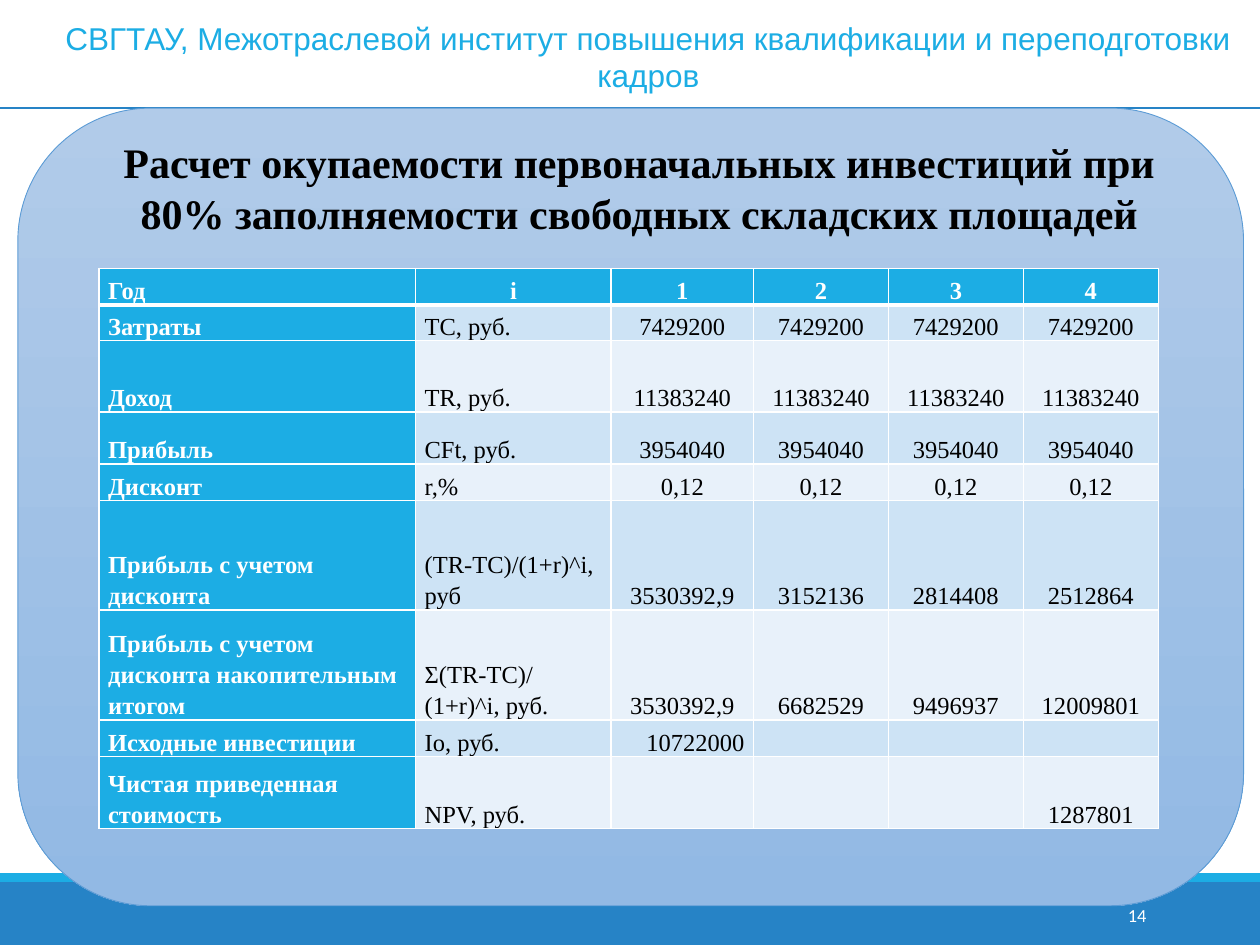
import pptx
import pptx.util
import pptx.dml.color
import pptx.enum.shapes
import pptx.enum.text
import lxml.etree
from pptx.oxml.ns import qn
from pptx.util import Cm

COLORS = {
    "blue": "2683C6",
    "cyan": "1CADE4",
    "panel_top": "B1CBE9",
    "panel_bottom": "92B9E4",
    "panel_line": "5B9BD5",
    "band_dark": "CDE3F5",
    "band_light": "E8F1FA",
    "white": "FFFFFF",
    "black": "000000",
}
SERIF = "Times New Roman"
ALIGN = pptx.enum.text.PP_ALIGN
ANCHOR = pptx.enum.text.MSO_ANCHOR
SHAPE = pptx.enum.shapes.MSO_SHAPE

COLUMN_WIDTHS = [6.38, 3.94, 2.87, 2.72, 2.72, 2.72]
ROWS = [
    (0.74, ["Год", "i", "1", "2", "3", "4"]),
    (0.71, ["Затраты", "TC, руб."] + ["7429200"] * 4),
    (1.45, ["Доход", "TR, руб."] + ["11383240"] * 4),
    (1.04, ["Прибыль", "CFt, руб."] + ["3954040"] * 4),
    (0.74, ["Дисконт", "r,%"] + ["0,12"] * 4),
    (2.21, ["Прибыль с учетом дисконта", "(TR-TC)/(1+r)^i, руб",
            "3530392,9", "3152136", "2814408", "2512864"]),
    (2.21, ["Прибыль с учетом дисконта накопительным итогом", "Σ(TR-TC)/(1+r)^i, руб.",
            "3530392,9", "6682529", "9496937", "12009801"]),
    (0.74, ["Исходные инвестиции", "Io, руб.", "10722000", "", "", ""]),
    (1.45, ["Чистая приведенная стоимость", "NPV, руб.", "", "", "", "1287801"]),
]
INVESTMENT_CELL = (7, 2)


def rgb(name):
    return pptx.dml.color.RGBColor.from_string(COLORS[name])


def add_text(paragraph, text, size, font, color, bold=False):
    run = paragraph.add_run()
    run.text = text
    run.font.size = pptx.util.Pt(size)
    run.font.name = font
    run.font.bold = bold
    run.font.color.rgb = rgb(color)


def add_text_box(slide, box, text, size, font, color, align, anchor, bold=False, grow=False):
    frame = slide.shapes.add_textbox(*map(Cm, box)).text_frame
    frame.word_wrap = True
    frame.vertical_anchor = anchor
    if grow:
        frame.auto_size = pptx.enum.text.MSO_AUTO_SIZE.SHAPE_TO_FIT_TEXT
    frame.paragraphs[0].alignment = align
    add_text(frame.paragraphs[0], text, size, font, color, bold)


def add_bar(slide, box, color):
    bar = slide.shapes.add_shape(SHAPE.RECTANGLE, *map(Cm, box))
    bar.shadow.inherit = False
    bar.fill.solid()
    bar.fill.fore_color.rgb = rgb(color)
    bar.line.fill.background()


def add_footer(slide, box, number):
    left, top, width, height = box
    strip = 0.18
    add_bar(slide, (left, top + strip, width, height - strip), "blue")
    add_bar(slide, (left, top, width, strip), "cyan")
    add_text_box(slide, (left + 20.62, top + 0.33, 2.74, 1.02), number, 10.5, "Calibri",
                 "white", ALIGN.RIGHT, ANCHOR.MIDDLE)


def add_header_rule(slide, box):
    left, top, width, height = box
    bottom = Cm(top + height)
    rule = slide.shapes.add_connector(pptx.enum.shapes.MSO_CONNECTOR.STRAIGHT,
                                      Cm(left), bottom, Cm(left + width), bottom)
    rule.line.color.rgb = rgb("blue")
    rule.line.width = pptx.util.Pt(1.25)
    lxml.etree.SubElement(rule._element.spPr, qn("a:effectLst"))


def add_header_text(slide, box, text):
    left, top, width, height = box
    add_text_box(slide, (left + 0.97, top + 0.25, width - 1.2, 1.8), text, 18, "Arial",
                 "cyan", ALIGN.CENTER, ANCHOR.TOP, grow=True)


def add_panel(slide, box, title):
    left, top, width, height = box
    panel = slide.shapes.add_shape(SHAPE.ROUNDED_RECTANGLE, *map(Cm, box))
    panel.shadow.inherit = False
    panel.fill.gradient()
    panel.fill.gradient_angle = 270
    for stop, color in zip(panel.fill.gradient_stops, ("panel_top", "panel_bottom")):
        stop.color.rgb = rgb(color)
    panel.line.color.rgb = rgb("panel_line")
    panel.line.width = pptx.util.Pt(0.5)
    add_text_box(slide, (left + 1.64, top + 0.44, 21.77, 2.31), title, 24, SERIF,
                 "black", ALIGN.CENTER, ANCHOR.MIDDLE, bold=True, grow=True)
    add_payback_table(slide, (left + 1.64, top + 3.23, 21.35, 11.29))


def set_border(cell, side, points):
    line = lxml.etree.SubElement(cell._tc.get_or_add_tcPr(), qn("a:ln" + side),
                                 w=str(pptx.util.Pt(points)))
    fill = lxml.etree.SubElement(line, qn("a:solidFill"))
    lxml.etree.SubElement(fill, qn("a:srgbClr"), val=COLORS["white"])


def format_cell(cell, row, column, text):
    is_heading = row == 0 or column == 0
    heavy_side = {0: "B", 1: "T"}.get(row)
    for side in "LRTB":
        set_border(cell, side, 3 if side == heavy_side else 1)
    cell.fill.solid()
    band = "band_dark" if row % 2 else "band_light"
    cell.fill.fore_color.rgb = rgb("cyan" if is_heading else band)
    cell.margin_left = cell.margin_right = Cm(0.18)
    cell.margin_top = cell.margin_bottom = Cm(0)
    cell.vertical_anchor = ANCHOR.BOTTOM
    paragraph = cell.text_frame.paragraphs[0]
    paragraph.line_spacing = 1.15
    if (row, column) == INVESTMENT_CELL:
        paragraph.alignment = ALIGN.RIGHT
    elif column > 1 or (row, column) == (0, 1):
        paragraph.alignment = ALIGN.CENTER
    else:
        paragraph.alignment = ALIGN.LEFT
    if text:
        add_text(paragraph, text, 14, SERIF, "white" if is_heading else "black", is_heading)
    else:
        lxml.etree.SubElement(paragraph._p, qn("a:endParaRPr"), sz="1400")


def add_payback_table(slide, box):
    frame = slide.shapes.add_table(len(ROWS), len(COLUMN_WIDTHS), *map(Cm, box))
    table = frame.table
    for column, width in zip(table.columns, COLUMN_WIDTHS):
        column.width = Cm(width)
    for row, (height, texts) in enumerate(ROWS):
        table.rows[row].height = Cm(height)
        for column, text in enumerate(texts):
            format_cell(table.cell(row, column), row, column, text)


def main():
    presentation = pptx.Presentation()
    presentation.slide_width = Cm(25.4)
    presentation.slide_height = Cm(19.05)
    slide = presentation.slides.add_slide(presentation.slide_layouts[6])
    header_box = (0, 0, 25.4, 2.18)
    add_footer(slide, (0, 17.6, 25.4, 1.45), "14")
    add_header_rule(slide, header_box)
    add_panel(slide, (0.36, 2.18, 24.71, 16.08),
              "Расчет окупаемости первоначальных инвестиций при 80% "
              "заполняемости свободных складских площадей")
    add_header_text(slide, header_box,
                    "СВГТАУ, Межотраслевой институт повышения квалификации "
                    "и переподготовки кадров")
    presentation.save("out.pptx")


if __name__ == "__main__":
    main()
